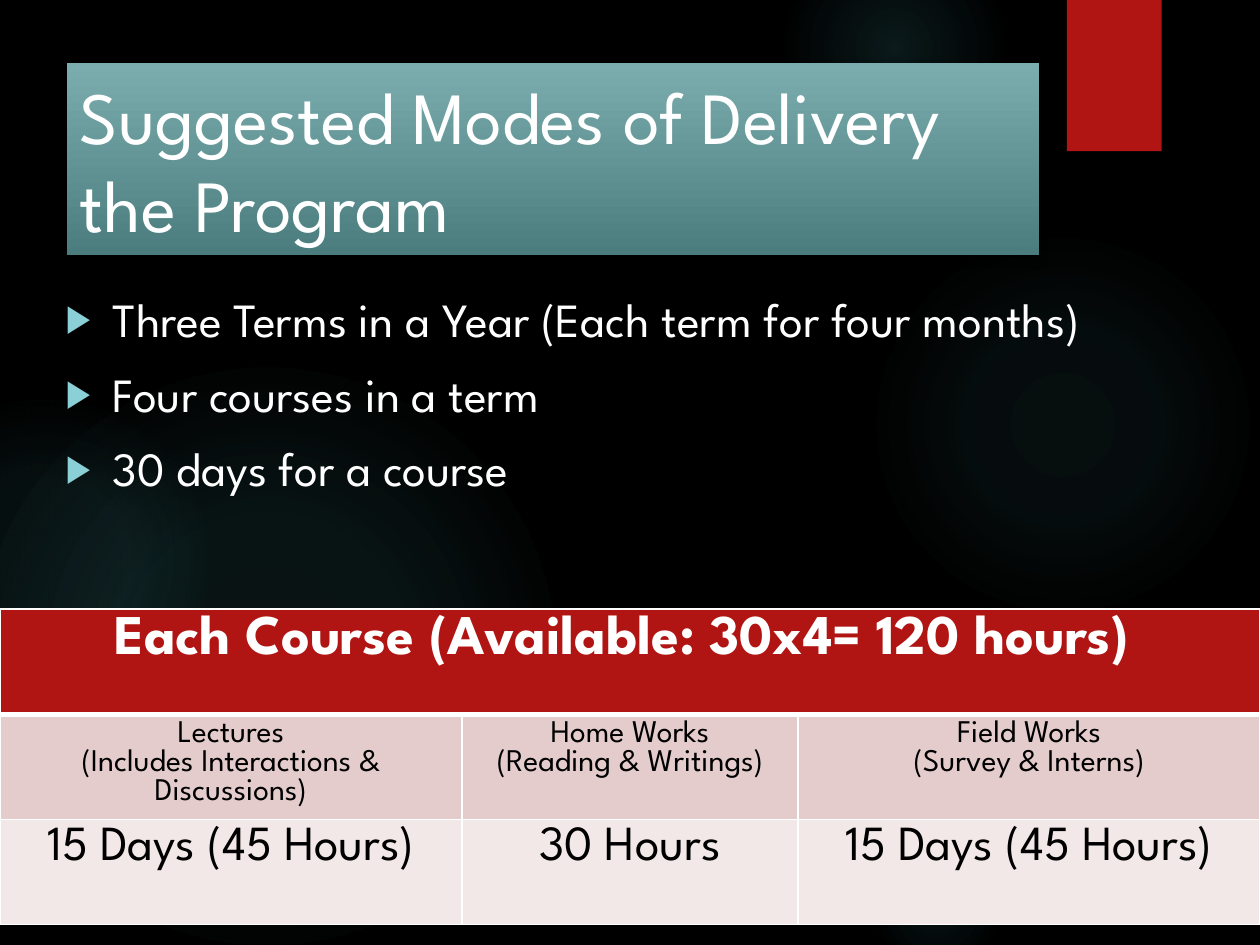
from lxml import etree
from pptx import Presentation
from pptx.dml.color import RGBColor
from pptx.enum import shapes, text
from pptx.oxml import parse_xml
from pptx.oxml.ns import nsdecls, qn
from pptx.util import Cm, Pt

FONT = "League Spartan"
WHITE, RED, AQUA = "FFFFFF", "B01513", "50B9C1"


def paint(target, tint):
    """Give a fill a solid colour, or a font its face and colour."""
    if hasattr(target, "solid"):
        target.solid()
        target.fore_color.rgb = RGBColor.from_string(tint)
    else:
        target.name = FONT
        target.color.rgb = RGBColor.from_string(tint)


def shade(shape, alpha, blur, dist):
    """Drop a black shadow straight down."""
    shape.shadow.inherit = False
    shape._element.spPr.find(qn("a:effectLst")).append(parse_xml(
        f'<a:outerShdw {nsdecls("a")} blurRad="{Pt(blur)}" dist="{Pt(dist)}" '
        f'dir="5400000" rotWithShape="0"><a:srgbClr val="000000">'
        f'<a:alpha val="{alpha * 1000}"/></a:srgbClr></a:outerShdw>'))


prs = Presentation()
prs.slide_width, prs.slide_height = Cm(25.4), Cm(19.05)
slide = prs.slides.add_slide(prs.slide_layouts[1])
paint(slide.background.fill, "000000")
title, body = slide.placeholders

# Soft round glows: left, top, size, then (place, opacity) stops in percent
glows = [
    (17.5, 4.65, 7.82, [(0, 7), (36, 6), (69, 0)]),
    (15.8, -1.27, 4.45, [(0, 14), (36, 7), (73, 0)]),
    (17.5, 16.94, 2.74, [(0, 9), (36, 5), (66, 0)]),
    (-0.43, 7.42, 11.63, [(0, 11), (36, 10), (75, 0)]),
    (-2.34, 8.05, 6.55, [(0, 8), (36, 8), (72, 0)]),
]
for left, top, size, stops in glows:
    glow = slide.shapes.add_shape(
        shapes.MSO_SHAPE.OVAL, Cm(left), Cm(top), Cm(size), Cm(size))
    glow.shadow.inherit = False
    glow.line.fill.background()
    marks = "".join(
        f'<a:gs pos="{pos * 1000}"><a:srgbClr val="{AQUA}">'
        f'<a:alpha val="{alpha * 1000}"/></a:srgbClr></a:gs>'
        for pos, alpha in stops)
    glow._element.spPr.insert(2, parse_xml(
        f'<a:gradFill {nsdecls("a")}><a:gsLst>{marks}</a:gsLst>'
        '<a:path path="circle"><a:fillToRect l="50000" t="50000" '
        'r="50000" b="50000"/></a:path></a:gradFill>'))

tab = slide.shapes.add_shape(
    shapes.MSO_SHAPE.RECTANGLE, Cm(21.51), 0, Cm(1.91), Cm(3.05))
paint(tab.fill, RED)
tab.line.fill.background()
shade(tab, 45, 3, 2)

# Bring the placeholders in front of the glows
for holder in (title, body):
    slide.shapes._spTree.append(holder._element)

title.left, title.top, title.width, title.height = (
    Cm(1.35), Cm(1.26), Cm(19.6), Cm(3.88))
title.fill.gradient()
title.fill.gradient_angle = 270
for stop, tint in zip(title.fill.gradient_stops, ("7CADAE", "4C7D7E")):
    stop.color.rgb = RGBColor.from_string(tint)
shade(title, 60, 5, 3)
frame = title.text_frame
frame.text = "Suggested Modes of Delivery the Program"
frame.auto_size = text.MSO_AUTO_SIZE.NONE
frame.vertical_anchor = text.MSO_ANCHOR.MIDDLE
head = frame.paragraphs[0]
head.alignment = text.PP_ALIGN.LEFT
head.font.size = Pt(42)
paint(head.font, WHITE)

body.left, body.top, body.width, body.height = (
    Cm(1.07), Cm(5.72), Cm(22.43), Cm(4.88))
frame = body.text_frame
frame.text = "\n".join([
    "Three Terms in a Year (Each term for four months)",
    "Four courses in a term",
    "30 days for a course",
])
frame.auto_size = text.MSO_AUTO_SIZE.NONE
for para in frame.paragraphs:
    para.space_before = Pt(10)
    para.font.size = Pt(27.2)
    paint(para.font, WHITE)
    props = para._p.get_or_add_pPr()
    props.set("marL", str(Cm(0.95)))
    props.set("indent", str(-Cm(0.95)))
    tint = etree.Element(qn("a:buClr"))
    etree.SubElement(tint, qn("a:srgbClr"), val="8AD0D6")
    spot = props.index(props.find(qn("a:spcBef"))) + 1
    props[spot:spot] = [
        tint,
        etree.Element(qn("a:buSzPct"), val="80000"),
        etree.Element(qn("a:buFont"), typeface="Arial"),
        etree.Element(qn("a:buChar"), char="▶"),
    ]

# Each row: fill, font colour, size, bold, cell texts
rows = [
    (RED, WHITE, 32, True, ["Each Course (Available: 30x4= 120 hours) "]),
    ("E4CCCC", "000000", 18, False, [
        "Lectures\n(Includes Interactions & Discussions)",
        "Home Works\n(Reading & Writings)",
        "Field Works\n(Survey & Interns)"]),
    ("F2E8E7", "000000", 28, False, [
        "15 Days (45 Hours)", "30 Hours", "15 Days (45 Hours)"]),
]
table = slide.shapes.add_table(
    3, 3, 0, Cm(12.28), Cm(25.4), Cm(6.35)).table
for col, width in zip(table.columns, (9.31, 6.78, 9.31)):
    col.width = Cm(width)
table.cell(0, 0).merge(table.cell(0, 2))
for r, (back, ink, size, bold, words) in enumerate(rows):
    table.rows[r].height = Cm(2.12)
    for c, word in enumerate(words):
        cell = table.cell(r, c)
        paint(cell.fill, back)
        cell.text = word
        for para in cell.text_frame.paragraphs:
            para.alignment = text.PP_ALIGN.CENTER
            para.font.size, para.font.bold = Pt(size), bold
            paint(para.font, ink)

# Thick white rule under the header row
for cell in table.rows[0].cells:
    cell._tc.get_or_add_tcPr().insert(0, parse_xml(
        f'<a:lnB {nsdecls("a")} w="{Pt(3)}"><a:solidFill>'
        f'<a:srgbClr val="{WHITE}"/></a:solidFill></a:lnB>'))

prs.save("out.pptx")
